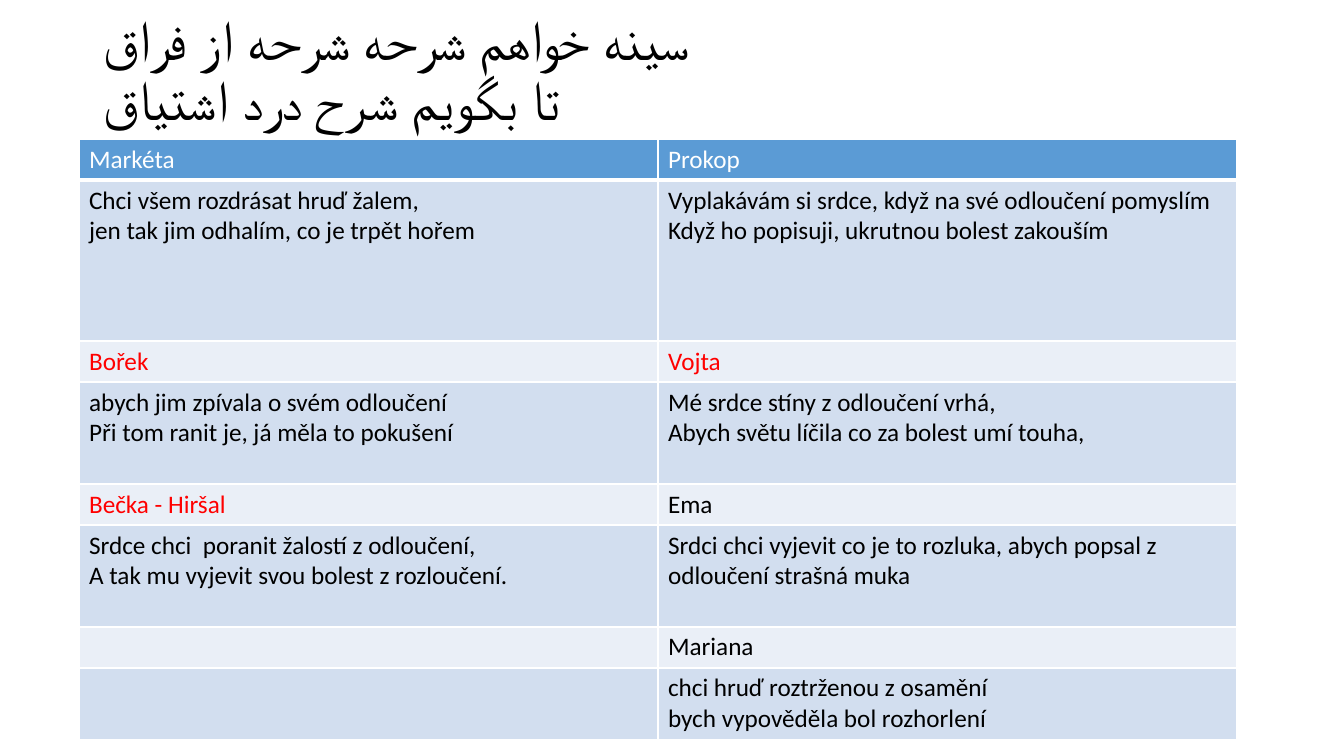
from pptx import Presentation
from pptx.dml.color import RGBColor
from pptx.enum.text import MSO_ANCHOR, MSO_AUTO_SIZE, PP_ALIGN
from pptx.oxml import parse_xml
from pptx.oxml.ns import nsdecls
from pptx.util import Emu, Pt

PX_PER_INCH = 100.8
COLORS = {"white": "FFFFFF", "black": "000000", "red": "FF0000",
          "header": "5B9BD5", "verse": "D2DEEF", "name": "EAEFF7"}


def px(n):
    return Emu(round(n * 914400 / PX_PER_INCH))


def style_runs(p, size, color):
    for r in p.runs:
        for key, value in {"name": "Calibri", "size": Pt(size), "bold": False}.items():
            setattr(r.font, key, value)
        r.font.color.rgb = RGBColor.from_string(COLORS[color])


prs = Presentation()
prs.slide_width, prs.slide_height = px(1344), px(756)
s = prs.slides.add_slide(prs.slide_layouts[5])

# Title: the Persian couplet
title = s.shapes.title
for key, value in {"left": 93, "top": 40, "width": 1159, "height": 131}.items():
    setattr(title, key, px(value))
tf = title.text_frame
for key, value in {"word_wrap": True, "auto_size": MSO_AUTO_SIZE.NONE,
                   "vertical_anchor": MSO_ANCHOR.MIDDLE}.items():
    setattr(tf, key, value)
p = tf.paragraphs[0]
p.text = "سینه خواهم شرحه شرحه از فراق\vتا بگویم شرح درد اشتیاق\v"
p.alignment = PP_ALIGN.LEFT
p.line_spacing = 0.9
p._p.get_or_add_pPr().set("rtl", "1")
style_runs(p, 39.6, "black")
p.font.size = Pt(39.6)

# Translations: height, fill, then text and colour of each column
# (\v breaks a line, \n starts a paragraph)
rows = [
    (41, "header", ("Markéta", "white"), ("Prokop", "white")),
    (161, "verse",
     ("Chci všem rozdrásat hruď žalem,\vjen tak jim odhalím, co je trpět hořem", "black"),
     ("Vyplakávám si srdce, když na své odloučení pomyslím\n"
      "Když ho popisuji, ukrutnou bolest zakouším", "black")),
    (41, "name", ("Bořek", "red"), ("Vojta", "red")),
    (102, "verse",
     ("abych jim zpívala o svém odloučení\vPři tom ranit je, já měla to pokušení", "black"),
     ("Mé srdce stíny z odloučení vrhá,\n"
      "Abych světu líčila co za bolest umí touha,", "black")),
    (41, "name", ("Bečka - Hiršal", "red"), ("Ema", "black")),
    (102, "verse",
     ("Srdce chci  poranit žalostí z odloučení,\n"
      "A tak mu vyjevit svou bolest z rozloučení.", "black"),
     ("Srdci chci vyjevit co je to rozluka, abych popsal z odloučení strašná muka", "black")),
    (41, "name", ("", "black"), ("Mariana", "black")),
    (72, "verse", ("", "black"),
     ("chci hruď roztrženou z osamění\nbych vypověděla bol rozhorlení", "black")),
]
COL_W = 579
table = s.shapes.add_table(len(rows), 2, px(79), px(139), px(2 * COL_W),
                           px(sum(row[0] for row in rows))).table
for col in table.columns:
    col.width = px(COL_W)

for i, (height, fill, *texts) in enumerate(rows):
    table.rows[i].height = px(height)
    for j, (text, color) in enumerate(texts):
        cell = table.cell(i, j)
        if text:
            cell.text = text
        for p in cell.text_frame.paragraphs:
            style_runs(p, 18, color)
        # White borders, thicker under the header
        tcPr = cell._tc.get_or_add_tcPr()
        for side in ("L", "R", "T", "B"):
            width = Pt(3 if i == 0 and side == "B" else 1)
            tcPr.append(parse_xml(
                f'<a:ln{side} {nsdecls("a")} w="{width}"><a:solidFill>'
                f'<a:srgbClr val="{COLORS["white"]}"/></a:solidFill></a:ln{side}>'))
        cell.fill.solid()
        cell.fill.fore_color.rgb = RGBColor.from_string(COLORS[fill])

prs.save("out.pptx")
